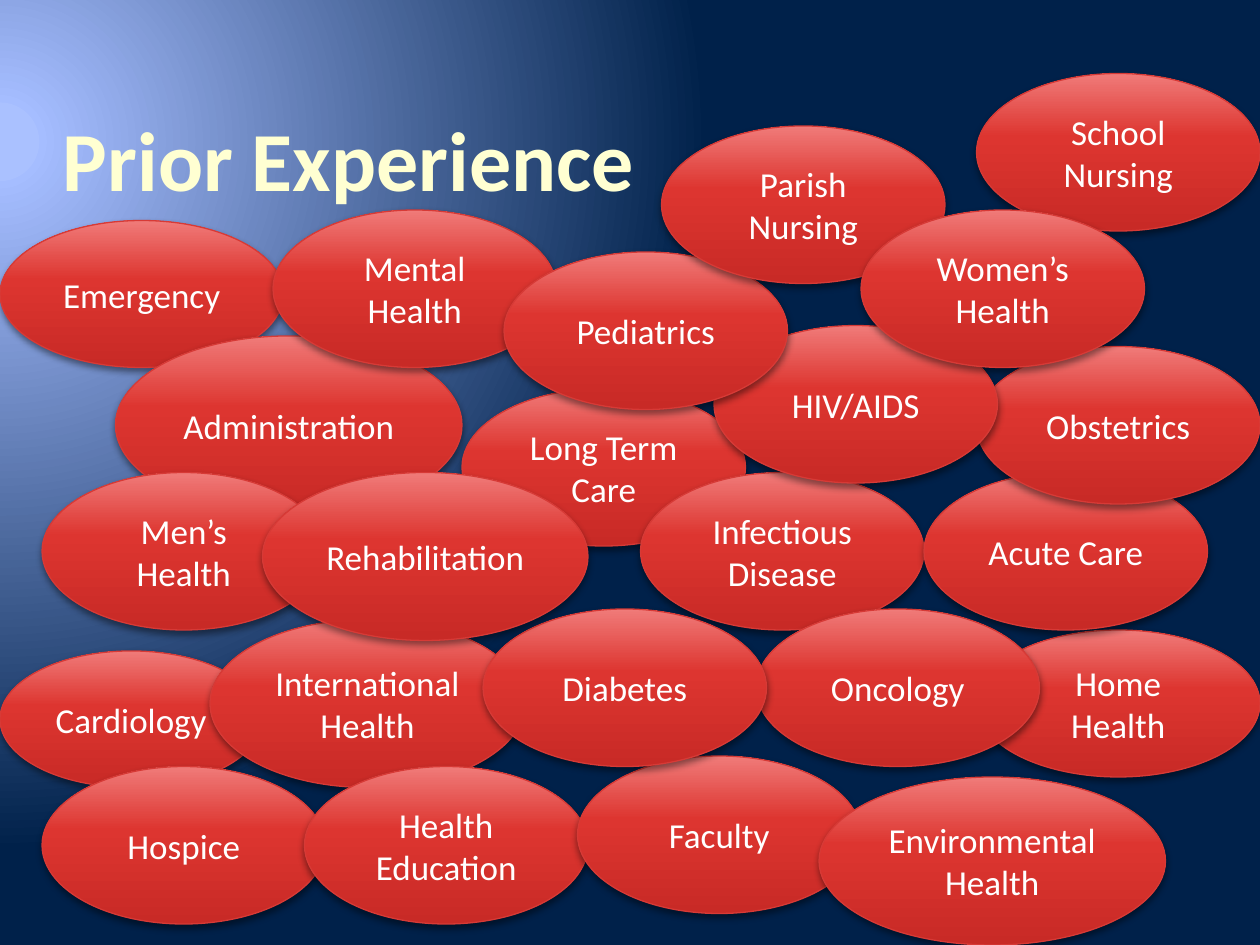
from lxml import etree
from pptx import Presentation
from pptx.dml.color import RGBColor
from pptx.enum.shapes import MSO_SHAPE as Shape
from pptx.enum.text import MSO_ANCHOR as Anchor, PP_ALIGN as Align
from pptx.oxml import parse_xml
from pptx.oxml.ns import nsdecls, qn
from pptx.util import Inches, Pt

WIDTH, HEIGHT = 10, 7.5
UNIT = 1 / 12  # the slide is a grid of 120 columns by 90 rows
FONT = "Calibri"
COLORS = {
    "title": "FFFFD2", "label": "FFFFFF", "outline": "D73A36", "shadow": "000000",
    "red_dark": "C82A26", "red": "DD3530", "red_light": "F07B79",
    "glow": "AAC1FF", "sky": "A5BDFF", "night": "00214A",
    "wave": "00469C", "crest": "7C9FFF",
}

# Gradient stops: position %, colour, opacity %
BACKGROUND = [(5, "glow", 100), (5, "sky", 100), (90, "night", 100)]
BUBBLE = [(0, "red_dark", 100), (60, "red", 100), (100, "red_light", 100)]

# Each wave: left start, two curve controls, right end, bottom, gradient stops
WAVES = [
    ((0, 2.13), (5, 2.13), (5.34, 0.05), (10, 1.25), 7.33,
     [(65, "wave", 0), (100, "crest", 55)]),
    ((0, 2.13), (5, 2.13), (5.98, 0.31), (10, 1.47), 6.37,
     [(65, "wave", 0), (100, "sky", 30)]),
]

TITLE = ("Prior Experience", (6, 7, 108, 13))
USUAL_SIZE = (27, 15)
# Back to front: label, column, row and, where unusual, width and height
FIELDS = [
    ("Long Term Care", 44, 37),
    ("Cardiology", 0, 62, 25, 13),
    ("Home Health", 93, 60, 27, 14),
    ("Emergency", 0, 21, 27, 14),
    ("International Health", 20, 59, 30, 16),
    ("Infectious Disease", 61, 45),
    ("Acute Care", 88, 45),
    ("Hospice", 4, 73),
    ("Oncology", 72, 58),
    ("Health Education", 29, 73),
    ("Faculty", 55, 72),
    ("Environmental Health", 78, 74, 33, 16),
    ("Diabetes", 46, 58),
    ("Administration", 11, 32, 33, 17),
    ("Obstetrics", 93, 33),
    ("Mental Health", 26, 20),
    ("HIV/AIDS", 68, 31),
    ("Men’s Health", 4, 45),
    ("School Nursing", 93, 7),
    ("Rehabilitation", 25, 45, 31, 16),
    ("Pediatrics", 48, 24),
    ("Parish Nursing", 63, 12),
    ("Women’s Health", 82, 20),
]


def gradient(stops, direction):
    """Return a gradFill element; direction is its a:lin or a:path markup."""
    marks = "".join(
        f'<a:gs pos="{position * 1000}"><a:srgbClr val="{COLORS[color]}">'
        f'<a:alpha val="{opacity * 1000}"/></a:srgbClr></a:gs>'
        for position, color, opacity in stops)
    return parse_xml(f'<a:gradFill {nsdecls("a")} rotWithShape="1">'
                     f'<a:gsLst>{marks}</a:gsLst>{direction}</a:gradFill>')


def linear(degrees):
    return f'<a:lin ang="{degrees * 60000}" scaled="0"/>'


def fill_gradient(shape, stops, degrees):
    shape.fill.background()
    properties = shape._element.spPr
    properties.replace(properties.find(qn("a:noFill")), gradient(stops, linear(degrees)))


def paint_background(slide):
    slide.background.fill.solid()
    solid = next(slide._element.iter(qn("a:solidFill")))
    glow = ('<a:path path="circle"><a:fillToRect l="20000" t="30000" '
            'r="135000" b="100000"/></a:path>')
    solid.getparent().replace(solid, gradient(BACKGROUND, glow))


def add_wave(slide, start, control_1, control_2, end, bottom, stops):
    builder = slide.shapes.build_freeform(*start, scale=Inches(1))
    builder.add_line_segments([end, (end[0], bottom), (start[0], bottom)], close=True)
    shape = builder.convert_to_shape()
    shape.shadow.inherit = False
    shape.line.fill.background()
    fill_gradient(shape, stops, 260)
    # The first straight segment becomes the curved crest
    segment = next(shape._element.iter(qn("a:lnTo")))
    curve = etree.Element(qn("a:cubicBezTo"))
    for x, y in (control_1, control_2, end):
        etree.SubElement(curve, qn("a:pt"), x=str(Inches(x) - shape.left),
                         y=str(Inches(y) - shape.top))
    segment.getparent().replace(segment, curve)


def grid_box(*cells):
    return [Inches(cell * UNIT) for cell in cells]


def write(shape, text, size, color, bold=False, align=Align.LEFT, anchor=Anchor.MIDDLE):
    frame = shape.text_frame
    frame.word_wrap = True
    frame.vertical_anchor = anchor
    paragraph = frame.paragraphs[0]
    paragraph.alignment = align
    run = paragraph.add_run()
    run.text = text
    run.font.name = FONT
    run.font.size = Pt(size)
    run.font.bold = bold
    run.font.color.rgb = RGBColor.from_string(COLORS[color])
    return frame


def add_bubble(slide, label, column, row, width=USUAL_SIZE[0], height=USUAL_SIZE[1]):
    shape = slide.shapes.add_shape(Shape.OVAL, *grid_box(column, row, width, height))
    fill_gradient(shape, BUBBLE, 270)
    shape.line.color.rgb = RGBColor.from_string(COLORS["outline"])
    shape.line.width = Pt(0.75)
    shape.shadow.inherit = False
    shape._element.spPr.find(qn("a:effectLst")).append(parse_xml(
        f'<a:outerShdw {nsdecls("a")} blurRad="{Pt(4)}" dist="{Pt(2)}" dir="5400000" '
        f'rotWithShape="0"><a:srgbClr val="{COLORS["shadow"]}">'
        '<a:alpha val="43000"/></a:srgbClr></a:outerShdw>'))
    write(shape, label, 20, "label", align=Align.CENTER)


def main():
    presentation = Presentation()
    presentation.slide_width, presentation.slide_height = Inches(WIDTH), Inches(HEIGHT)
    slide = presentation.slides.add_slide(presentation.slide_layouts[6])
    paint_background(slide)
    for wave in WAVES:
        add_wave(slide, *wave)
    text, cells = TITLE
    title = slide.shapes.add_textbox(*grid_box(*cells))
    frame = write(title, text, 48, "title", bold=True, anchor=Anchor.BOTTOM)
    frame.margin_left = frame.margin_right = 0
    frame.margin_top = frame.margin_bottom = Inches(0.01)
    for field in FIELDS:
        add_bubble(slide, *field)
    presentation.save("out.pptx")


if __name__ == "__main__":
    main()
